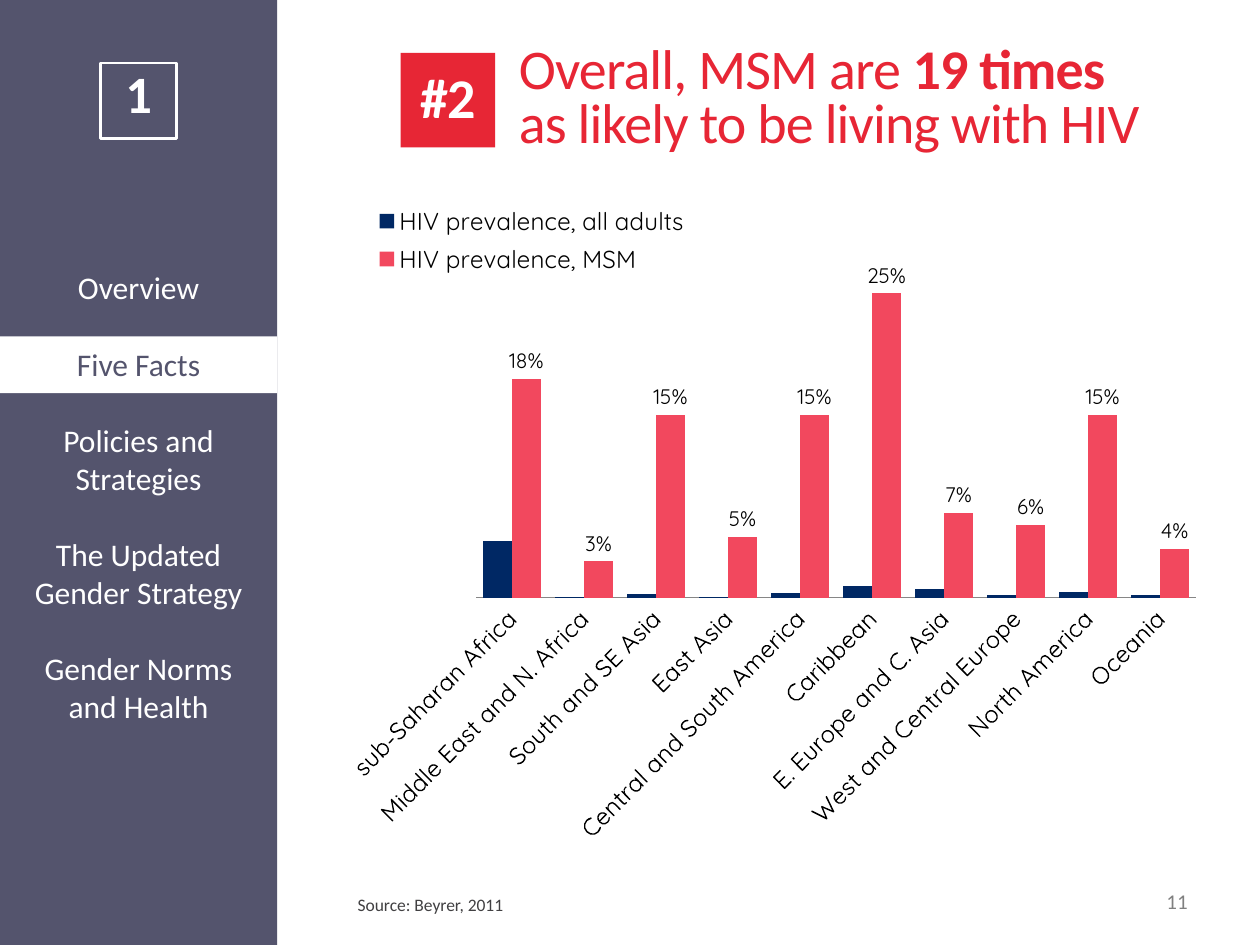
from lxml import etree
from pptx import Presentation
from pptx.chart.data import CategoryChartData
from pptx.dml.color import RGBColor
from pptx.enum.chart import XL_CHART_TYPE as ChartType
from pptx.enum.chart import XL_LABEL_POSITION as LabelPosition
from pptx.enum.chart import XL_LEGEND_POSITION as LegendPosition
from pptx.enum.chart import XL_TICK_LABEL_POSITION as TickLabels
from pptx.enum.chart import XL_TICK_MARK as TickMark
from pptx.enum.shapes import MSO_SHAPE as Shape
from pptx.enum.text import MSO_ANCHOR as Anchor
from pptx.enum.text import PP_ALIGN as Align
from pptx.oxml.ns import qn
from pptx.util import Inches, Pt

WHITE, SLATE, RED, BLACK = "FFFFFF", "54546D", "E72635", "000000"
color = RGBColor.from_string

deck = Presentation()
deck.slide_width, deck.slide_height = Inches(10), Inches(7.5)
page = deck.slides.add_slide(deck.slide_layouts[6])


def set_font(font, size, hex_color, name="Calibri", bold=False):
    values = {"size": Pt(size), "name": name, "bold": bold}
    for key, value in values.items():
        setattr(font, key, value)
    font.color.rgb = color(hex_color)


def add_text(box, paragraphs, size, anchor=Anchor.MIDDLE, align=Align.CENTER,
             spacing=None, tracking=None, wrap=True):
    """Each paragraph is a list of (text, color, bold) spans."""
    frame = box.text_frame
    frame.word_wrap = wrap
    frame.vertical_anchor = anchor
    for index, spans in enumerate(paragraphs):
        para = frame.add_paragraph() if index else frame.paragraphs[0]
        para.alignment = align
        para.line_spacing = spacing
        for text, hex_color, bold in spans:
            span = para.add_run()
            span.text = text
            set_font(span.font, size, hex_color, bold=bold)
            if tracking is not None:
                span.font._element.set("spc", str(tracking))


# Rectangles: sidebar, section number, highlight and fact badge
rectangles = {
    "sidebar": ((0, 0, 2.2, 7.5), SLATE, None),
    "section": ((0.8, 0.5, 0.6, 0.6), None, WHITE),
    "highlight": ((0, 2.67, 2.2, 0.45), WHITE, None),
    "badge": ((3.18, 0.42, 0.75, 0.75), RED, None),
}
boxes = {}
for name, (place, fill, line) in rectangles.items():
    box = page.shapes.add_shape(Shape.RECTANGLE, *map(Inches, place))
    box.shadow.inherit = False
    if fill:
        box.fill.solid()
        box.fill.fore_color.rgb = color(fill)
    else:
        box.fill.background()
    if line:
        box.line.color.rgb = color(line)
        box.line.width = Pt(1.5)
    else:
        box.line.fill.background()
    boxes[name] = box
add_text(boxes["section"], [[("1", WHITE, True)]], 30, spacing=0.7)
add_text(boxes["badge"], [[("#2", WHITE, True)]], 32, spacing=0.9, tracking=-50)

# Sidebar menu: a line's height before each entry, none before a continuation
menu = [("Overview", 0), ("Five Facts", 22), ("Policies and Strategies", 22),
        ("The Updated Gender Strategy", 22), ("Gender Norms", 22), ("and Health", 0)]
menu_box = page.shapes.add_textbox(*map(Inches, (0, 2.09, 2.2, 3.7)))
add_text(menu_box,
         [[(entry, SLATE if entry == "Five Facts" else WHITE, False)] for entry, gap in menu],
         18)
for para, (entry, gap) in zip(menu_box.text_frame.paragraphs, menu):
    para.space_before = Pt(gap)

# Title
title_box = page.shapes.add_textbox(*map(Inches, (4.02, 0.32, 5.14, 1)))
add_text(title_box, [[("Overall, MSM are ", RED, False), ("19 times ", RED, True),
                      ("as likely to be living with HIV", RED, False)]],
         32, anchor=Anchor.TOP, align=Align.LEFT, spacing=0.8, tracking=-50)

# Prevalence chart
prevalence = [
    ("sub-Saharan Africa", 0.047, 0.18),
    ("Middle East and N. Africa", 0.001, 0.03),
    ("South and SE Asia", 0.003, 0.15),
    ("East Asia", 0.001, 0.05),
    ("Central and South America", 0.004, 0.15),
    ("Caribbean", 0.01, 0.25),
    ("E. Europe and C. Asia", 0.007, 0.07),
    ("West and Central Europe", 0.002, 0.06),
    ("North America", 0.005, 0.15),
    ("Oceania", 0.002, 0.04),
]
regions, adults, msm = zip(*prevalence)
data = CategoryChartData()
data.categories = regions
data.add_series("HIV prevalence, all adults", adults)
data.add_series("HIV prevalence, MSM", msm)
chart = page.shapes.add_chart(ChartType.COLUMN_CLUSTERED,
                              *map(Inches, (2.75, 1.58, 6.75, 5.42)), data).chart
set_font(chart.font, 14, BLACK, "Quicksand")
chart.has_title = False
plot = chart.plots[0]
for key, value in {"gap_width": 50, "overlap": 0, "vary_by_categories": False}.items():
    setattr(plot, key, value)
for series, fill in zip(plot.series, ("002864", "F2485E")):
    series.format.fill.solid()
    series.format.fill.fore_color.rgb = color(fill)

# Percentages above the MSM columns
labels = plot.series[1].data_labels
label_values = {"show_value": True, "position": LabelPosition.OUTSIDE_END,
                "number_format": "0%", "number_format_is_linked": False}
for key, value in label_values.items():
    setattr(labels, key, value)
set_font(labels.font, 12, BLACK, "Quicksand")

# Axes: slanted region names, hidden value scale
region_axis, value_axis = chart.category_axis, chart.value_axis
region_axis.major_tick_mark = TickMark.NONE
region_axis.format.line.color.rgb = color("868686")
set_font(region_axis.tick_labels.font, 14, BLACK, "Quicksand")
region_axis._element.find(qn("c:txPr")).find(qn("a:bodyPr")).set("rot", "-2700000")
axis_values = {"minimum_scale": 0, "maximum_scale": 0.3, "has_major_gridlines": False,
               "major_tick_mark": TickMark.NONE, "tick_label_position": TickLabels.NONE}
for key, value in axis_values.items():
    setattr(value_axis, key, value)
value_axis.format.line.fill.background()

# Legend and fixed places of legend and plot area, as fractions of the chart
chart.has_legend = True
legend = chart.legend
legend.position = LegendPosition.RIGHT
legend.include_in_layout = False
set_font(legend.font, 14, BLACK, "Quicksand")
plot_area = chart._chartSpace.chart.plotArea
for part, inner, place in ((plot_area, True, (0.138, 0.049, 0.862, 0.535)),
                           (legend._element, False, (0.01, 0, 0.39, 0.12))):
    layout = part.find(qn("c:layout"))
    if layout is None:
        layout = etree.Element(qn("c:layout"))
        part.insert(0 if inner else 1, layout)
    for child in list(layout):
        layout.remove(child)
    manual = etree.SubElement(layout, qn("c:manualLayout"))
    settings = [("layoutTarget", "inner")] if inner else []
    settings += [("xMode", "edge"), ("yMode", "edge"), *zip("xywh", place)]
    for tag, value in settings:
        etree.SubElement(manual, qn("c:" + tag)).set("val", str(value))

# Page number and source
number_box = page.shapes.add_textbox(*map(Inches, (9.16, 7, 0.84, 0.3)))
add_text(number_box, [[("11", "808080", False)]], 12, anchor=Anchor.TOP, align=Align.LEFT)
source_box = page.shapes.add_textbox(*map(Inches, (2.74, 7.04, 1.39, 0.27)))
add_text(source_box, [[("Source: Beyrer, 2011", "414042", False)]], 10,
         align=Align.LEFT, wrap=False)

deck.save("out.pptx")
